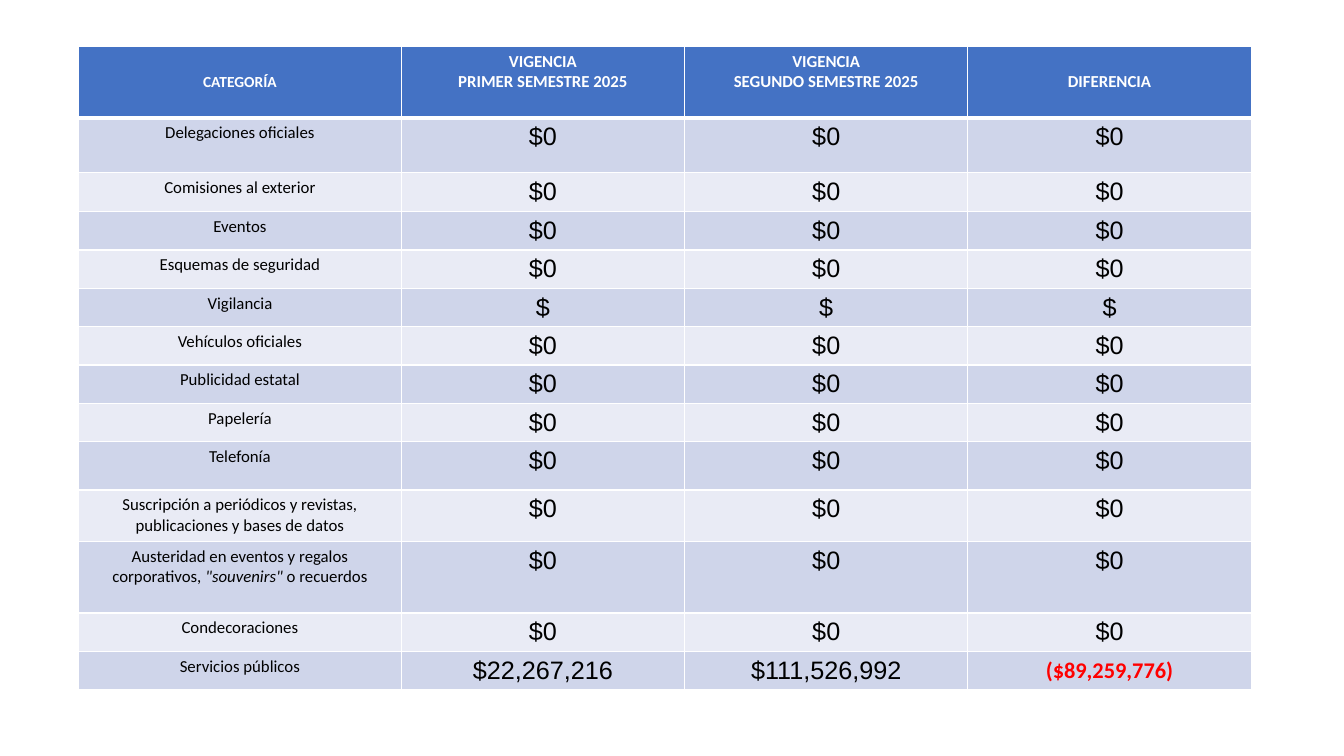
"""Build a slide with a table of spending by category in both halves of 2025."""
from lxml.etree import SubElement
from pptx import Presentation
from pptx.dml.color import RGBColor
from pptx.enum.text import MSO_ANCHOR, PP_ALIGN
from pptx.oxml.ns import qn
from pptx.util import Inches, Pt

WHITE = RGBColor(0xFF, 0xFF, 0xFF)
BLACK = RGBColor(0, 0, 0)
RED = RGBColor(0xFF, 0, 0)
BLUE = RGBColor(0x44, 0x72, 0xC4)
BANDS = RGBColor(0xE9, 0xEB, 0xF5), RGBColor(0xCF, 0xD5, 0xEA)

HEAD = ["CATEGORÍA", "VIGENCIA\nPRIMER SEMESTRE 2025",
        "VIGENCIA\nSEGUNDO SEMESTRE 2025", "DIFERENCIA"]
ZERO = ["$0"] * 3
ROWS = [
    ("Delegaciones oficiales", ZERO, 0.54),
    ("Comisiones al exterior", ZERO, 0.39),
    ("Eventos", ZERO, 0.36),
    ("Esquemas de seguridad", ZERO, 0.36),
    ("Vigilancia", ["$"] * 3, 0.36),
    ("Vehículos oficiales", ZERO, 0.36),
    ("Publicidad estatal", ZERO, 0.36),
    ("Papelería", ZERO, 0.36),
    ("Telefonía", ZERO, 0.48),
    ("Suscripción a periódicos y revistas, publicaciones y bases de datos", ZERO, 0.51),
    ('Austeridad en eventos y regalos corporativos, *"souvenirs"* o recuerdos', ZERO, 0.71),
    ("Condecoraciones", ZERO, 0.36),
    ("Servicios públicos", ["$22,267,216", "$111,526,992", "($89,259,776)"], 0.36),
]
WIDTHS = [3.2] + [2.81] * 3
HEIGHTS = [0.71] + [high for _, _, high in ROWS]


def write(cell, text, size=12, font="Calibri", color=BLACK, bold=False, middle=False):
    """Write centred lines in a cell, with the words between asterisks in italics."""
    cell.vertical_anchor = MSO_ANCHOR.MIDDLE if middle else MSO_ANCHOR.TOP
    frame = cell.text_frame
    for num, line in enumerate(text.split("\n")):
        para = frame.add_paragraph() if num else frame.paragraphs[0]
        para.alignment = PP_ALIGN.CENTER
        for part, words in enumerate(line.split("*")):
            run = para.add_run()
            run.text = words
            run.font.size = Pt(size)
            run.font.name = font
            run.font.color.rgb = color
            run.font.bold = bold
            run.font.italic = part % 2 == 1


def paint(cell, fill, top, base):
    """Fill a cell and give it white borders of the given top and base widths."""
    props = cell._tc.get_or_add_tcPr()
    for side, width in zip("LRTB", (1, 1, top, base)):
        edge = SubElement(props, qn(f"a:ln{side}"), w=str(Pt(width)))
        solid = SubElement(edge, qn("a:solidFill"))
        SubElement(solid, qn("a:srgbClr"), val=str(WHITE))
    cell.fill.solid()
    cell.fill.fore_color.rgb = fill


deck = Presentation()
deck.slide_width, deck.slide_height = Inches(13.33), Inches(7.5)
slide = deck.slides.add_slide(deck.slide_layouts[6])
table = slide.shapes.add_table(
    len(HEIGHTS), len(WIDTHS), Inches(0.78), Inches(0.46),
    Inches(sum(WIDTHS)), Inches(sum(HEIGHTS))).table

for col, width in zip(table.columns, WIDTHS):
    col.width = Inches(width)
for row, height in zip(table.rows, HEIGHTS):
    row.height = Inches(height)

for col, text in enumerate(HEAD):
    cell = table.cell(0, col)
    paint(cell, BLUE, 1, 3)
    write(cell, text, size=12 if col else 11, color=WHITE, bold=True,
          middle="\n" not in text)

for row, (name, sums, _) in enumerate(ROWS, 1):
    for col, text in enumerate([name] + sums):
        cell = table.cell(row, col)
        paint(cell, BANDS[row % 2], 3 if row == 1 else 1, 1)
        if col == 0:
            write(cell, text)
        elif text.startswith("("):
            cell.margin_left = cell.margin_right = cell.margin_top = Inches(0.01)
            cell.margin_bottom = 0
            write(cell, text, size=16, color=RED, bold=True, middle=True)
        else:
            write(cell, text, size=18, font="Arial")

deck.save("out.pptx")
